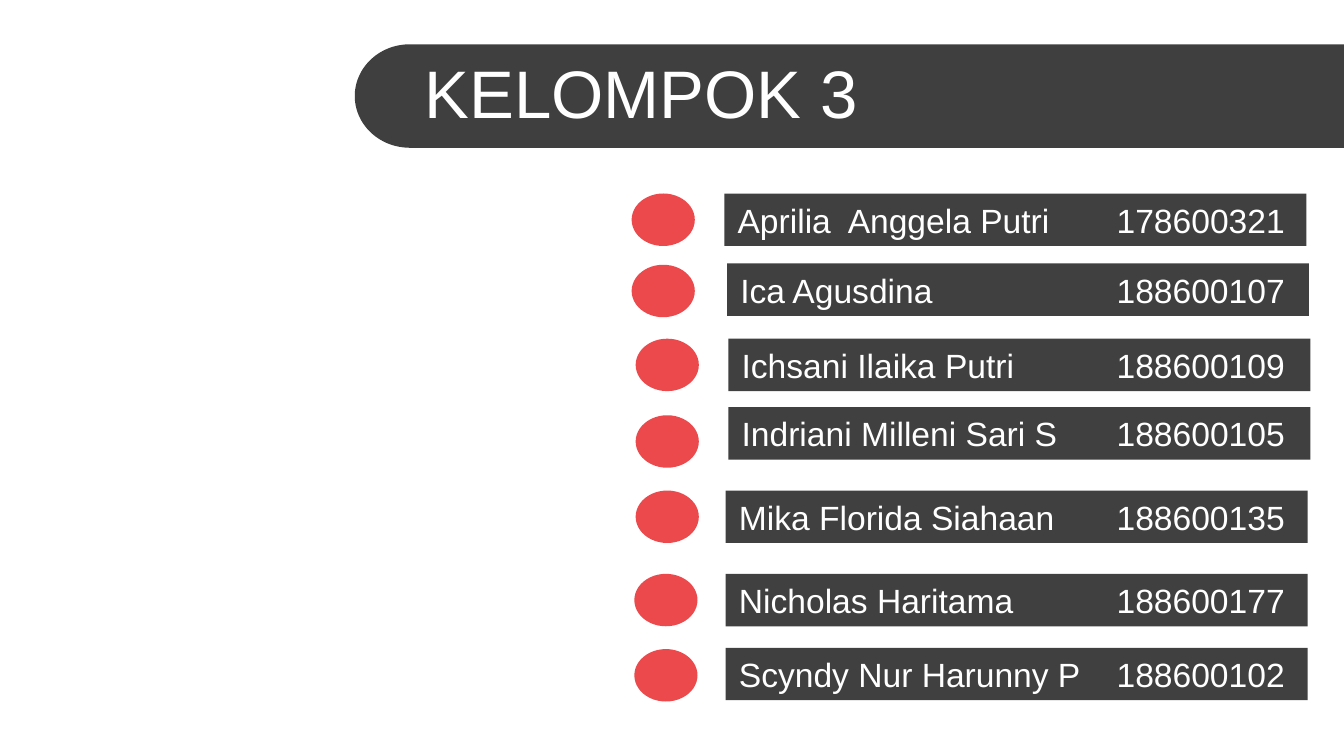
from math import cos, pi, sin

from lxml.etree import SubElement
from pptx import Presentation
from pptx.dml.color import RGBColor
from pptx.enum.shapes import MSO_SHAPE
from pptx.enum.text import MSO_ANCHOR, MSO_AUTO_SIZE, PP_ALIGN
from pptx.oxml.ns import qn
from pptx.util import Inches, Pt

# Content: name, number, then left and top of the bar and of the dot
TITLE = "KELOMPOK 3"
MEMBERS = [
    ("Aprilia  Anggela Putri", "178600321", (5.39, 1.44), (4.70, 1.44)),
    ("Ica Agusdina", "188600107", (5.41, 1.96), (4.70, 1.97)),
    ("Ichsani Ilaika Putri", "188600109", (5.42, 2.52), (4.73, 2.52)),
    ("Indriani Milleni Sari S", "188600105", (5.42, 3.03), (4.73, 3.09)),
    ("Mika Florida Siahaan", "188600135", (5.40, 3.65), (4.73, 3.65)),
    ("Nicholas Haritama", "188600177", (5.40, 4.27), (4.72, 4.27)),
    ("Scyndy Nur Harunny P", "188600102", (5.40, 4.82), (4.72, 4.83)),
]
BAR_SIZE, DOT_SIZE = (4.33, 0.39), (0.47, 0.39)
NUMBER_LEFT = 8.31
INSET = 0.1
BANNER_LEFT, BANNER_TOP, BANNER_HEIGHT, CAP_WIDTH = 2.64, 0.33, 0.77, 0.41
PAGE_WIDTH = 10
PAGE_HEIGHT = PAGE_WIDTH * 9 / 16
CAP_STEPS = 60


def color(value):
    return RGBColor.from_string(value)


def paint(shape, fill):
    shape.shadow.inherit = False
    shape.fill.solid()
    shape.fill.fore_color.rgb = color(fill)
    shape.line.fill.background()


def add_block(page, kind, position, size, fill):
    block = page.shapes.add_shape(kind, *map(Inches, position + size))
    paint(block, fill)
    return block


def write(shape, text, size):
    frame = shape.text_frame
    frame.word_wrap = True
    frame.auto_size = MSO_AUTO_SIZE.NONE
    frame.vertical_anchor = MSO_ANCHOR.MIDDLE
    para = frame.paragraphs[0]
    para.alignment = PP_ALIGN.LEFT
    span = para.add_run()
    span.text = text
    span.font.size = Pt(size)
    span.font.name = "Arial"
    span.font.color.rgb = color("FFFFFF")
    return para


def add_tab(para, position):
    tabs = SubElement(para._p.get_or_add_pPr(), qn("a:tabLst"))
    SubElement(tabs, qn("a:tab"), pos=str(Inches(position)), algn="l")


def add_banner(page):
    radius = BANNER_HEIGHT / 2
    center_x, center_y = BANNER_LEFT + CAP_WIDTH, BANNER_TOP + radius
    angles = [pi / 2 + pi * step / CAP_STEPS for step in range(CAP_STEPS + 1)]
    points = [(PAGE_WIDTH, BANNER_TOP), (PAGE_WIDTH, BANNER_TOP + BANNER_HEIGHT)]
    points += [(center_x + CAP_WIDTH * cos(angle), center_y + radius * sin(angle))
               for angle in angles]
    corners = [(Inches(x), Inches(y)) for x, y in points]
    builder = page.shapes.build_freeform(*corners[0])
    builder.add_line_segments(corners[1:], close=True)
    banner = builder.convert_to_shape()
    paint(banner, "3F3F3F")
    return banner


deck = Presentation()
deck.slide_width, deck.slide_height = Inches(PAGE_WIDTH), Inches(PAGE_HEIGHT)
page = deck.slides.add_slide(deck.slide_layouts[5])

# Banner, placed behind the title
title = page.shapes.title
title.left, title.top, title.width, title.height = map(Inches, (3.06, 0.37, 6.94, 0.63))
write(title, TITLE, 36)
title.element.addprevious(add_banner(page).element)

# Members
for name, number, bar_position, dot_position in MEMBERS:
    add_block(page, MSO_SHAPE.OVAL, dot_position, DOT_SIZE, "EB494B")
    bar = add_block(page, MSO_SHAPE.RECTANGLE, bar_position, BAR_SIZE, "404040")
    para = write(bar, f"{name}\t{number}", 18)
    add_tab(para, NUMBER_LEFT - bar_position[0] - INSET)

deck.save("out.pptx")
